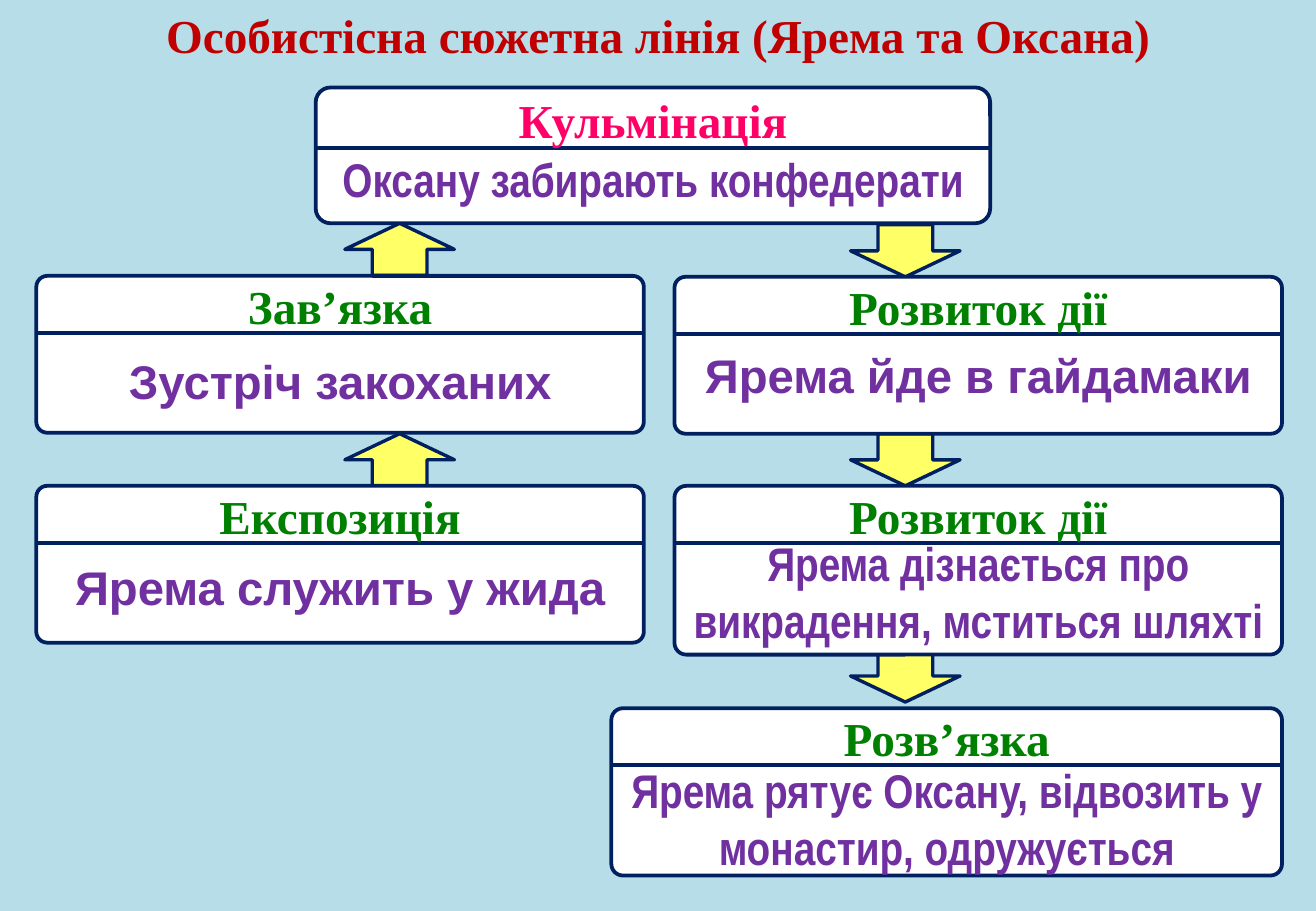
from dataclasses import dataclass

from lxml.etree import SubElement
from pptx import Presentation
from pptx.dml.color import RGBColor
from pptx.enum.shapes import MSO_CONNECTOR, MSO_SHAPE
from pptx.enum.text import MSO_ANCHOR, MSO_AUTO_SIZE, PP_ALIGN
from pptx.oxml.ns import qn
from pptx.util import Cm, Pt


@dataclass(frozen=True)
class Theme:
    background: str = "B7DEE8"
    title: str = "C00000"
    climax: str = "FF0066"
    heading: str = "008000"
    event: str = "7030A0"
    card: str = "FFFFFF"
    arrow: str = "FFFF66"
    outline: str = "002060"
    text_size: float = 28
    card_line: float = 2.25
    arrow_line: float = 2
    serif: str = "Times New Roman"
    sans: str = "Arial"
    narrow: str = "Arial Narrow"


@dataclass(frozen=True)
class Stage:
    """One plot stage; lengths in cm, event_top is measured from the card top."""
    heading: str
    event: str
    left: float
    top: float
    width: float
    height: float
    event_top: float
    event_font: str
    event_extra: float = 0
    heading_color: str = Theme.heading
    heading_lift: float = 0.1
    divider: float = 1.19
    corner: float = 0.07


SLIDE_WIDTH, SLIDE_HEIGHT = 27.51, 19.05
LINE_HEIGHT = 1.45
HEADING_WIDTH = 10.4
ARROW_WIDTH, ARROW_HEIGHT = 2.29, 1.09
LEFT_COLUMN, RIGHT_COLUMN, COLUMN_WIDTH = 0.76, 14.1, 12.7
ROW_TOP = 10.16

STAGES = [
    Stage("Зав’язка", "Зустріч закоханих",
          LEFT_COLUMN, 5.77, COLUMN_WIDTH, 3.28, 1.47, Theme.sans),
    Stage("Кульмінація", "Оксану забирають конфедерати",
          6.6, 1.83, 14.1, 2.84, 1.19, Theme.narrow,
          heading_color=Theme.climax, heading_lift=0.05, divider=1.27, corner=0.11),
    Stage("Експозиція", "Ярема служить у жида",
          LEFT_COLUMN, ROW_TOP, COLUMN_WIDTH, 3.28, 1.4, Theme.sans),
    Stage("Розв’язка", "Ярема рятує Оксану, відвозить у монастир, одружується",
          12.78, 14.81, 14.02, 3.5, 0.99, Theme.narrow, event_extra=0.78),
    Stage("Розвиток дії", "Ярема йде в гайдамаки",
          RIGHT_COLUMN, 5.79, COLUMN_WIDTH, 3.28, 1.32, Theme.sans),
    Stage("Розвиток дії", "Ярема дізнається про викрадення, мститься шляхті",
          RIGHT_COLUMN, ROW_TOP, COLUMN_WIDTH, 3.53, 0.89, Theme.narrow, event_extra=1.4),
]

RISING = (7.21, [4.67, 9.07], 0)
FALLING = (17.78, [4.7, 9.07, 13.59], 180)


class PlotSlide:
    def __init__(self, presentation, theme):
        self.theme = theme
        self.slide = presentation.slides.add_slide(presentation.slide_layouts[5])
        background = self.slide.background.fill
        background.solid()
        background.fore_color.rgb = RGBColor.from_string(theme.background)

    def set_text(self, holder, text, font_name, color):
        frame = holder.text_frame
        frame.text = text
        frame.word_wrap = True
        frame.auto_size = MSO_AUTO_SIZE.SHAPE_TO_FIT_TEXT
        frame.vertical_anchor = MSO_ANCHOR.TOP
        paragraph = frame.paragraphs[0]
        paragraph.alignment = PP_ALIGN.CENTER
        font = paragraph.runs[0].font
        font.name, font.size, font.bold = font_name, Pt(self.theme.text_size), True
        font.color.rgb = RGBColor.from_string(color)

    def title(self, text):
        title = self.slide.shapes.title
        title.left, title.top = Cm(0), Cm(0)
        title.width, title.height = Cm(SLIDE_WIDTH), Cm(LINE_HEIGHT)
        self.set_text(title, text, self.theme.serif, self.theme.title)

    def label(self, text, center, top, width, font_name, color):
        box = self.slide.shapes.add_textbox(
            Cm(center - width / 2), Cm(top), Cm(width), Cm(LINE_HEIGHT))
        self.set_text(box, text, font_name, color)

    def outline(self, line, width):
        line.color.rgb = RGBColor.from_string(self.theme.outline)
        line.width = Pt(width)

    def block(self, preset, left, top, width, height, fill, line_width):
        block = self.slide.shapes.add_shape(
            preset, Cm(left), Cm(top), Cm(width), Cm(height))
        block.shadow.inherit = False
        block.fill.solid()
        block.fill.fore_color.rgb = RGBColor.from_string(fill)
        self.outline(block.line, line_width)
        return block

    def arrow(self, left, top, rotation):
        arrow = self.block(MSO_SHAPE.UP_ARROW, left, top, ARROW_WIDTH, ARROW_HEIGHT,
                           self.theme.arrow, self.theme.arrow_line)
        arrow.rotation = rotation

    def divider(self, left, top, width):
        divider = self.slide.shapes.add_connector(
            MSO_CONNECTOR.STRAIGHT, Cm(left), Cm(top), Cm(left + width), Cm(top))
        self.outline(divider.line, self.theme.card_line)
        SubElement(divider._element.spPr, qn("a:effectLst"))

    def stage(self, stage):
        card = self.block(MSO_SHAPE.ROUNDED_RECTANGLE, stage.left, stage.top,
                          stage.width, stage.height, self.theme.card, self.theme.card_line)
        card.adjustments[0] = stage.corner
        self.divider(stage.left, stage.top + stage.divider, stage.width)
        center = stage.left + stage.width / 2
        self.label(stage.heading, center, stage.top - stage.heading_lift,
                   HEADING_WIDTH, self.theme.serif, stage.heading_color)
        self.label(stage.event, center, stage.top + stage.event_top,
                   stage.width + stage.event_extra, stage.event_font, self.theme.event)


def main():
    presentation = Presentation()
    presentation.slide_width, presentation.slide_height = Cm(SLIDE_WIDTH), Cm(SLIDE_HEIGHT)
    plot = PlotSlide(presentation, Theme())
    plot.title("Особистісна сюжетна лінія (Ярема та Оксана)")
    for left, tops, rotation in (RISING, FALLING):
        for top in tops:
            plot.arrow(left, top, rotation)
    for stage in STAGES:
        plot.stage(stage)
    presentation.save("out.pptx")


if __name__ == "__main__":
    main()
